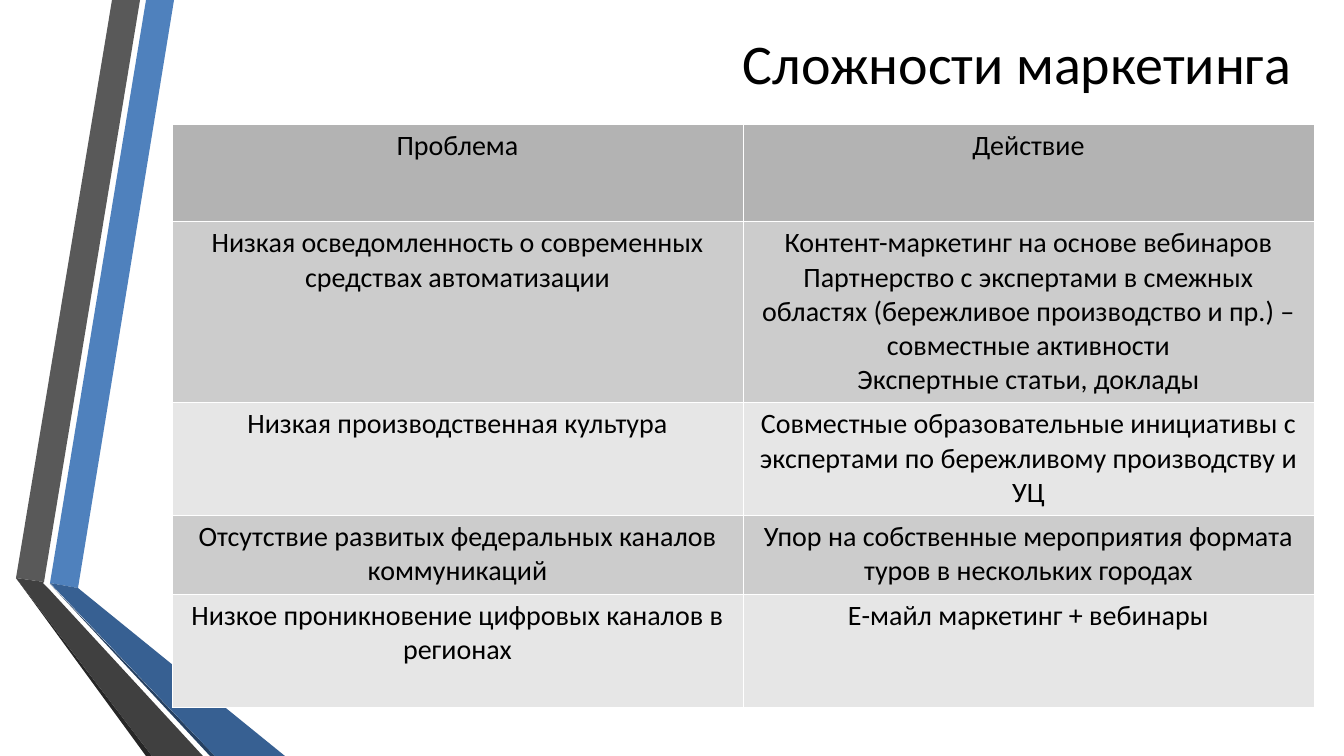
"""Build the marketing difficulties slide."""
from lxml import etree
from pptx import Presentation, util as u
from pptx.dml.color import RGBColor
from pptx.enum import text
from pptx.oxml import ns

PX = u.Inches(1) / 100.8
FONT = "Calibri"
COLORS = {
    "text": "000000",
    "border": "FFFFFF",
    "header": "B3B3B3",
    "odd_row": "CCCCCC",
    "even_row": "E6E6E6",
    "blue": "4F81BD",
    "blue_dark": "376092",
    "blue_edge": "254061",
    "grey": "595959",
    "grey_dark": "404040",
    "grey_edge": "262626",
}
RIBBONS = [
    ("blue", [(50, 583), (78, 588), (174, 0), (146, 0)]),
    ("grey", [(140, 0), (112, 0), (16, 578), (44, 582)]),
    ("grey_edge", [(16, 578), (146, 756), (152, 756)]),
    ("blue_edge", [(50, 584), (210, 756), (215, 756)]),
    ("blue_dark", [(50, 583), (215, 756), (285, 756), (78, 588)]),
    ("grey_dark", [(203, 756), (48, 588), (43, 583), (44, 582), (16, 578), (152, 756)]),
]
ROW_HEIGHTS = [97, 181, 113, 79, 113]
COLUMN_WIDTH = 571
ROWS = [
    (["Проблема"], ["Действие"]),
    (
        ["Низкая осведомленность о современных средствах автоматизации"],
        [
            "Контент-маркетинг на основе вебинаров",
            "Партнерство с экспертами в смежных областях "
            "(бережливое производство и пр.) – совместные активности",
            "Экспертные статьи, доклады",
        ],
    ),
    (
        ["Низкая производственная культура"],
        ["Совместные образовательные инициативы с экспертами "
         "по бережливому производству и УЦ"],
    ),
    (
        ["Отсутствие развитых федеральных каналов коммуникаций"],
        ["Упор на собственные мероприятия формата туров в нескольких городах"],
    ),
    (
        ["Низкое проникновение цифровых каналов в регионах"],
        ["Е-майл маркетинг + вебинары"],
    ),
]


def px(length):
    """Turn pixels into EMU."""
    return u.Emu(round(length * PX))


def color(name):
    """Look up a named colour."""
    return RGBColor.from_string(COLORS[name])


def write_paragraphs(frame, lines, size, alignment):
    """Fill a text frame with one paragraph per line."""
    for index, line in enumerate(lines):
        paragraph = frame.add_paragraph() if index else frame.paragraphs[0]
        paragraph.alignment = alignment
        run = paragraph.add_run()
        run.text = line
        run.font.name = FONT
        run.font.size = u.Pt(size)
        run.font.color.rgb = color("text")


def add_ribbon(slide, fill, points):
    """Draw one closed, filled ribbon piece."""
    builder = slide.shapes.build_freeform(*points[0], scale=PX)
    builder.add_line_segments(points[1:], close=True)
    shape = builder.convert_to_shape()
    shape.shadow.inherit = False
    shape.fill.solid()
    shape.fill.fore_color.rgb = color(fill)
    shape.line.fill.background()


def add_title(slide, title):
    """Add the right-aligned title."""
    shape = slide.shapes.add_textbox(px(163), px(27), px(1138), px(71))
    frame = shape.text_frame
    frame.word_wrap = True
    frame.vertical_anchor = text.MSO_ANCHOR.MIDDLE
    write_paragraphs(frame, [title], 40, text.PP_ALIGN.RIGHT)


def set_borders(cell):
    """Give a cell thin lines on all four sides."""
    properties = cell._tc.get_or_add_tcPr()
    for side in ("lnL", "lnR", "lnT", "lnB"):
        line = etree.SubElement(properties, ns.qn(f"a:{side}"), w=str(u.Pt(0.06)))
        fill = etree.SubElement(line, ns.qn("a:solidFill"))
        etree.SubElement(fill, ns.qn("a:srgbClr"), val=COLORS["border"])


def add_problem_table(slide):
    """Add the table of problems and actions."""
    frame = slide.shapes.add_table(
        len(ROWS), 2, px(172), px(124), px(2 * COLUMN_WIDTH), px(sum(ROW_HEIGHTS))
    )
    table = frame.table
    for column in table.columns:
        column.width = px(COLUMN_WIDTH)
    for index, (height, contents) in enumerate(zip(ROW_HEIGHTS, ROWS)):
        table.rows[index].height = px(height)
        fill = "header" if index == 0 else "odd_row" if index % 2 else "even_row"
        for cell, lines in zip(table.rows[index].cells, contents):
            set_borders(cell)
            cell.fill.solid()
            cell.fill.fore_color.rgb = color(fill)
            write_paragraphs(cell.text_frame, lines, 20, text.PP_ALIGN.CENTER)
    table.first_row = False
    table.horz_banding = False


def main():
    """Build and save the presentation."""
    presentation = Presentation()
    presentation.slide_width = px(1344)
    presentation.slide_height = px(756)
    slide = presentation.slides.add_slide(presentation.slide_layouts[6])
    for fill, points in RIBBONS:
        add_ribbon(slide, fill, points)
    add_title(slide, "Сложности маркетинга")
    add_problem_table(slide)
    presentation.save("out.pptx")


if __name__ == "__main__":
    main()
